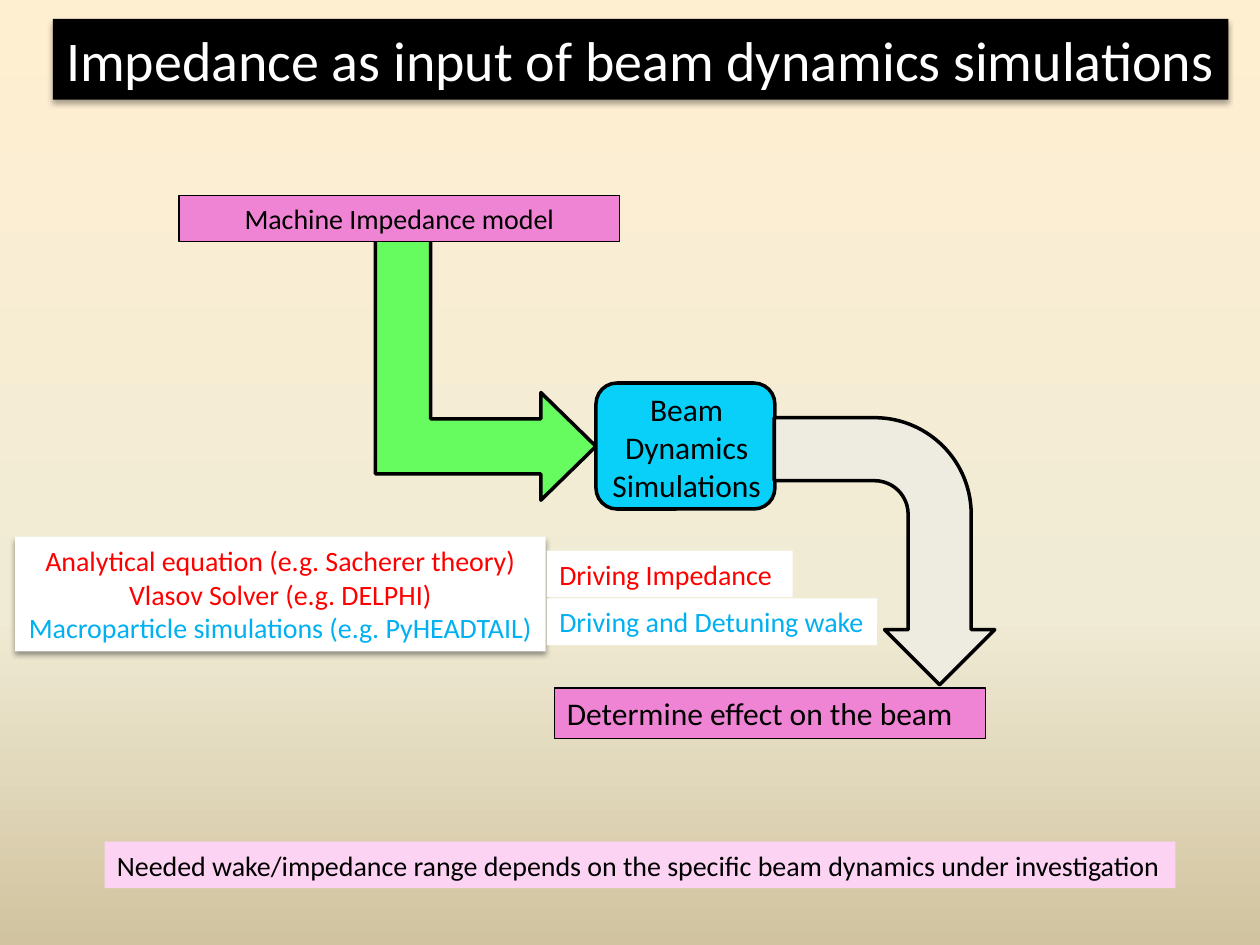
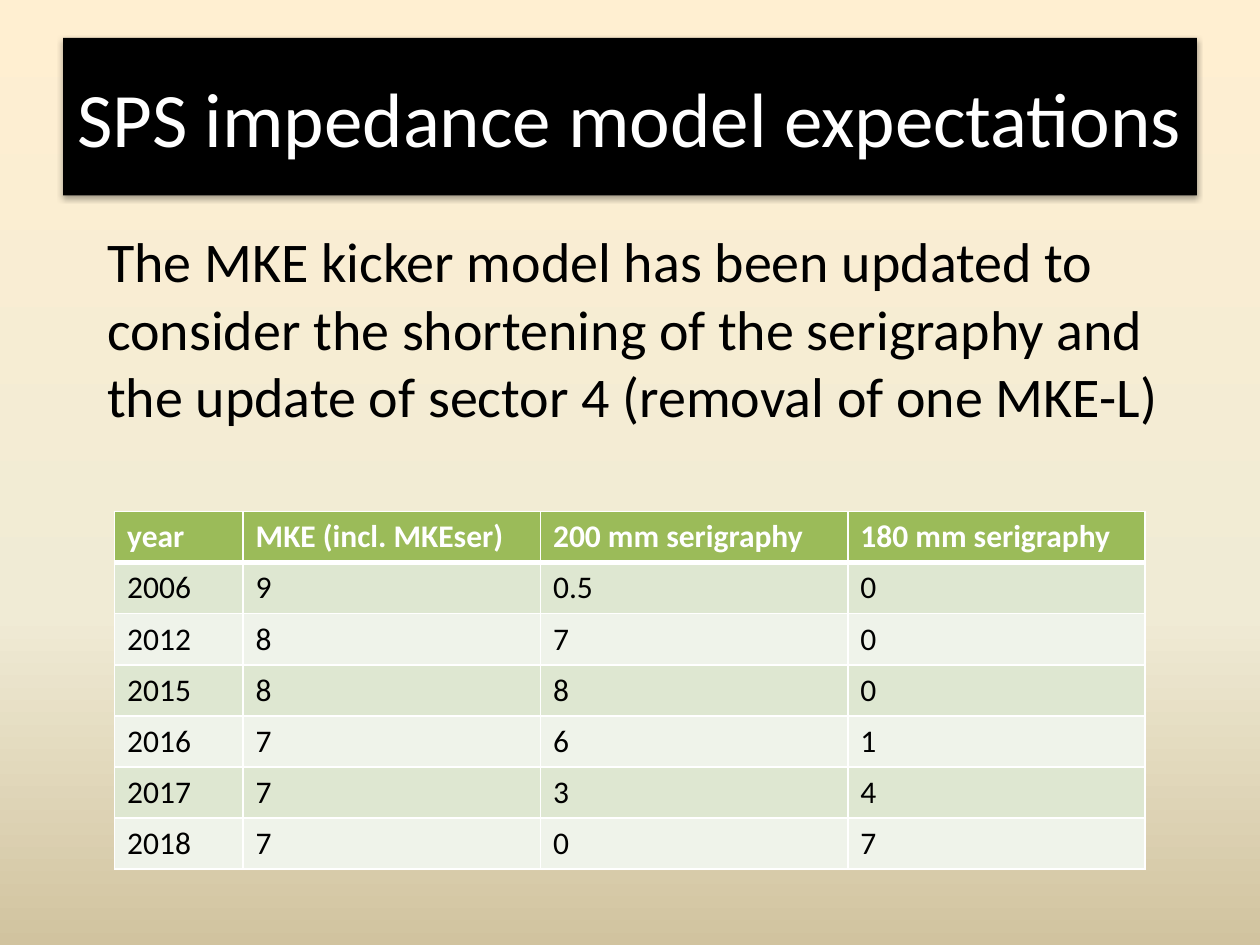
from dataclasses import dataclass
from typing import Optional

from pptx import Presentation
from pptx.dml.color import RGBColor
from pptx.enum.shapes import MSO_SHAPE as Kind
from pptx.enum.text import MSO_ANCHOR as Anchor, MSO_AUTO_SIZE as Fit, PP_ALIGN as Align
from pptx.oxml import parse_xml
from pptx.oxml.ns import nsdecls, qn
from pptx.util import Inches, Pt

BLACK = RGBColor(0x00, 0x00, 0x00)
WHITE = RGBColor(0xFF, 0xFF, 0xFF)
RED = RGBColor(0xFF, 0x00, 0x00)
BLUE = RGBColor(0x00, 0xB0, 0xF0)
CYAN = RGBColor(0x08, 0xD0, 0xF8)
LIME = RGBColor(0x66, 0xFB, 0x5F)
BONE = RGBColor(0xEE, 0xEC, 0xE1)
PINK = RGBColor(0xF0, 0x84, 0xD4)
ROSE = RGBColor(0xFD, 0xD3, 0xF4)
OLIVE = RGBColor(0x9B, 0xBB, 0x59)
SAGE = RGBColor(0xDE, 0xE7, 0xD1)
MINT = RGBColor(0xEF, 0xF3, 0xEA)
STOPS = (
    (0, RGBColor(0xFF, 0xEF, 0xD1)),
    (65, RGBColor(0xF0, 0xEB, 0xD5)),
    (100, RGBColor(0xD1, 0xC3, 0x9F)),
)
FONT = "Calibri"

Area = tuple[float, float, float, float]


@dataclass
class Box:
    area: Area
    fill: RGBColor
    lines: tuple[str, ...] = ()
    inks: tuple[RGBColor, ...] = (BLACK,)
    size: float = 16
    align: Align = Align.LEFT
    edge: float = 0
    kind: Kind = Kind.RECTANGLE
    turn: float = 0
    bends: tuple[float, ...] = ()
    shade: Optional[int] = None


FLOW = (
    Box((2.8, 2.04, 2.11, 1.75), LIME, edge=2, kind=Kind.BENT_UP_ARROW,
        turn=90, bends=(0.25, 0.244, 0.25)),
    Box((4.73, 3.04, 1.42, 1), CYAN, edge=2, kind=Kind.ROUNDED_RECTANGLE),
    Box((4.4, 5.46, 3.42, 0.4), PINK, ("Determine effect on the beam",),
        size=18, align=Align.JUSTIFY, edge=0.75),
    Box((5.96, 3.5, 2.12, 1.75), BONE, edge=2, kind=Kind.BENT_ARROW,
        turn=90, bends=(0.286, 0.25, 0.25, 0.438)),
    Box((1.42, 1.55, 3.5, 0.37), PINK, ("Machine Impedance model",),
        align=Align.CENTER, edge=0.75),
    Box((0.12, 4.26, 4.21, 0.91), WHITE,
        ("Analytical equation (e.g. Sacherer theory)",
         "Vlasov Solver (e.g. DELPHI)",
         "Macroparticle simulations (e.g. PyHEADTAIL)"),
        inks=(RED, RED, BLUE), align=Align.CENTER, shade=38),
    Box((0.83, 6.68, 8.5, 0.37), ROSE,
        ("Needed wake/impedance range depends on the specific "
         "beam dynamics under investigation",)),
    Box((4.34, 4.37, 1.95, 0.37), WHITE, ("Driving Impedance",), inks=(RED,)),
    Box((4.34, 4.75, 2.62, 0.37), WHITE, ("Driving and Detuning wake",), inks=(BLUE,)),
)

HEAD = ("year", "MKE (incl. MKEser)", "200 mm serigraphy", "180 mm serigraphy")
ROWS = (
    ("2006", "9", "0.5", "0"),
    ("2012", "8", "7", "0"),
    ("2015", "8", "8", "0"),
    ("2016", "7", "6", "1"),
    ("2017", "7", "3", "4"),
    ("2018", "7", "0", "7"),
)
WIDTHS = (1.02, 2.36, 2.44, 2.36)


def write(frame, *lines: str, size: float = 16, inks=(BLACK,),
          align: Align = Align.LEFT, bold: bool = False,
          anchor: Anchor = Anchor.MIDDLE) -> None:
    frame.word_wrap = True
    frame.auto_size = Fit.NONE
    frame.vertical_anchor = anchor
    for i, line in enumerate(lines):
        para = frame.paragraphs[0] if i == 0 else frame.add_paragraph()
        para.alignment = align
        run = para.add_run()
        run.text = line
        font = run.font
        font.name, font.size, font.bold = FONT, Pt(size), bold
        font.color.rgb = inks[i % len(inks)]


def place(shape, area: Area) -> None:
    shape.left, shape.top, shape.width, shape.height = map(Inches, area)


def paint(shape, fill: RGBColor, edge: float = 0, shade: Optional[int] = None) -> None:
    shape.fill.solid()
    shape.fill.fore_color.rgb = fill
    if edge:
        shape.line.color.rgb = BLACK
        shape.line.width = Pt(edge)
    else:
        shape.line.fill.background()
    shape.shadow.inherit = False
    if shade:
        glow = parse_xml(
            f'<a:outerShdw {nsdecls("a")} blurRad="{Pt(3.1)}" dist="{Pt(1.8)}" '
            f'dir="5400000" rotWithShape="0"><a:srgbClr val="{BLACK}">'
            f'<a:alpha val="{shade * 1000}"/></a:srgbClr></a:outerShdw>')
        shape.element.spPr.find(qn("a:effectLst")).append(glow)


def draw(slide, box: Box) -> None:
    shape = slide.shapes.add_shape(box.kind, *map(Inches, box.area))
    shape.rotation = box.turn
    for i, bend in enumerate(box.bends):
        shape.adjustments[i] = bend
    paint(shape, box.fill, box.edge, box.shade)
    if box.lines:
        write(shape.text_frame, *box.lines, size=box.size, inks=box.inks, align=box.align)


def wash(master) -> None:
    master.background.fill.solid()
    stops = "".join(f'<a:gs pos="{pos * 1000}"><a:srgbClr val="{tone}"/></a:gs>'
                    for pos, tone in STOPS)
    grad = parse_xml(f'<a:gradFill {nsdecls("a")} rotWithShape="1"><a:gsLst>{stops}'
                     '</a:gsLst><a:lin ang="5400000" scaled="0"/></a:gradFill>')
    back = master.element.find(".//" + qn("p:bgPr"))
    back.replace(back[0], grad)


def entitle(slide, text: str, area: Area, size: float) -> None:
    title = slide.shapes.title
    place(title, area)
    paint(title, BLACK, shade=35)
    write(title.text_frame, text, size=size, inks=(WHITE,), align=Align.CENTER)


def rule(cell, base: float) -> None:
    props = cell._tc.get_or_add_tcPr()
    for side, width in (("L", 1), ("R", 1), ("T", 1), ("B", base)):
        props.append(parse_xml(
            f'<a:ln{side} {nsdecls("a")} w="{Pt(width)}"><a:solidFill>'
            f'<a:srgbClr val="{WHITE}"/></a:solidFill></a:ln{side}>'))


def tabulate(slide) -> None:
    data = (HEAD, *ROWS)
    table = slide.shapes.add_table(len(data), len(HEAD), Inches(0.91), Inches(4.06),
                                   Inches(sum(WIDTHS)), Inches(2.84)).table
    for col, width in zip(table.columns, WIDTHS):
        col.width = Inches(width)
    for r, row in enumerate(data):
        top = r == 0
        for c, text in enumerate(row):
            cell = table.cell(r, c)
            rule(cell, 3 if top else 1)
            cell.fill.solid()
            cell.fill.fore_color.rgb = OLIVE if top else SAGE if r % 2 else MINT
            write(cell.text_frame, text, size=18, bold=top,
                  inks=(WHITE if top else BLACK,), anchor=Anchor.TOP)


def show_flow(deck) -> None:
    slide = deck.slides.add_slide(deck.slide_layouts[5])
    entitle(slide, "Impedance as input of beam dynamics simulations",
            (0.42, 0.15, 9.33, 0.64), 32)
    for box in FLOW:
        draw(slide, box)
    label = slide.shapes.add_textbox(*map(Inches, (4.7, 3.04, 1.5, 1.01)))
    write(label.text_frame, "Beam Dynamics Simulations", size=18, align=Align.CENTER)


def show_model(deck) -> None:
    slide = deck.slides.add_slide(deck.slide_layouts[1])
    entitle(slide, "SPS impedance model expectations", (0.5, 0.3, 9, 1.25), 44)
    body = slide.placeholders[1]
    place(body, (0.75, 1.75, 8.67, 1.84))
    write(body.text_frame,
          "The MKE kicker model has been updated to consider the shortening of the "
          "serigraphy and the update of sector 4 (removal of one MKE-L)",
          size=32, anchor=Anchor.TOP)
    props = body.text_frame.paragraphs[0]._p.get_or_add_pPr()
    props.set("marL", "0")
    props.set("indent", "0")
    props.append(parse_xml(f'<a:buNone {nsdecls("a")}/>'))
    tabulate(slide)


def main() -> None:
    deck = Presentation()
    deck.slide_width, deck.slide_height = Inches(10), Inches(7.5)
    wash(deck.slide_master)
    show_flow(deck)
    show_model(deck)
    deck.save("out.pptx")


if __name__ == "__main__":
    main()
